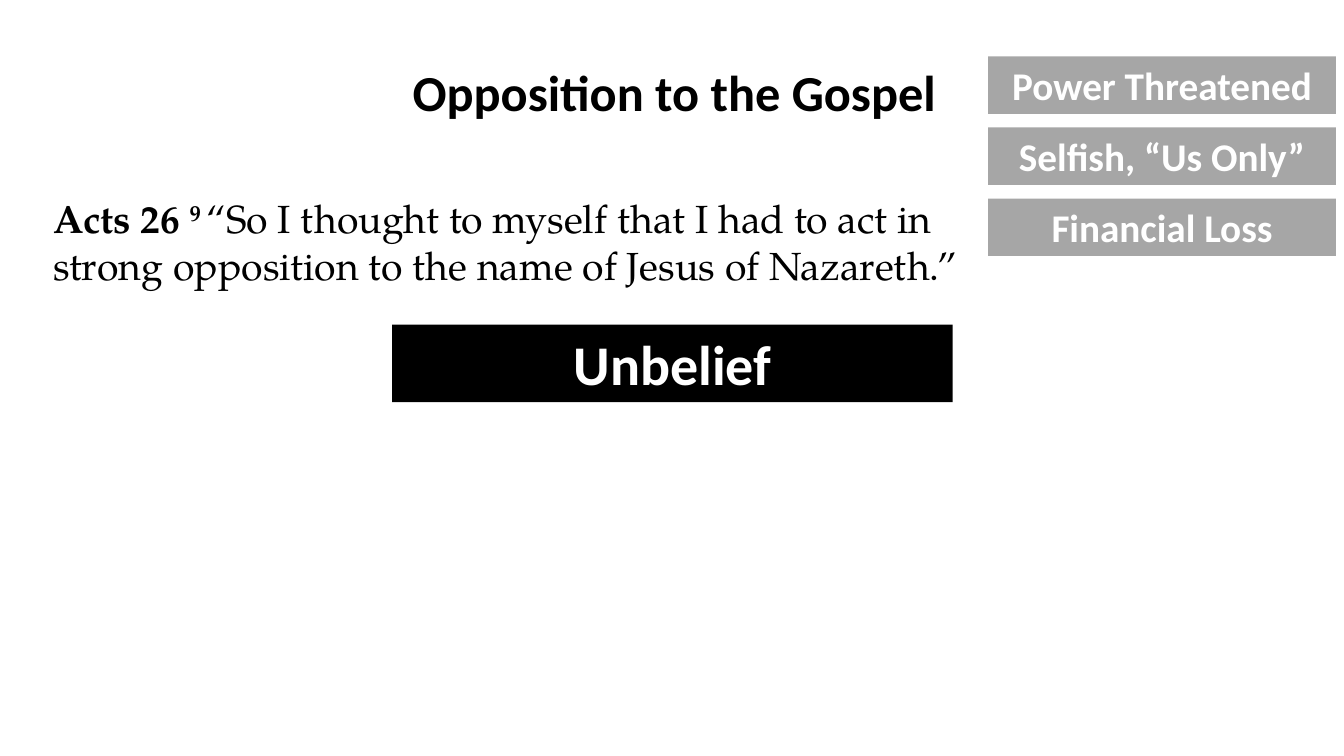
import pptx
import pptx.util
import pptx.dml.color
import pptx.enum.shapes
import pptx.enum.text

Inches = pptx.util.Inches
RGBColor = pptx.dml.color.RGBColor
Align = pptx.enum.text.PP_ALIGN
Anchor = pptx.enum.text.MSO_ANCHOR

BLACK = RGBColor(0x00, 0x00, 0x00)
WHITE = RGBColor(0xFF, 0xFF, 0xFF)
GRAY = RGBColor(0xA6, 0xA6, 0xA6)
SANS = "Calibri"
SERIF = "TeX Gyre Pagella"


class Deck:
    def __init__(self):
        self.prs = pptx.Presentation()
        self.prs.slide_width = Inches(13.33)
        self.prs.slide_height = Inches(7.5)
        self.slide = self.prs.slides.add_slide(self.prs.slide_layouts[5])

    def frame(self, shape, align, anchor):
        """Prepare the text frame and return its first paragraph."""
        frame = shape.text_frame
        frame.word_wrap = True
        frame.auto_size = pptx.enum.text.MSO_AUTO_SIZE.SHAPE_TO_FIT_TEXT
        frame.vertical_anchor = anchor
        para = frame.paragraphs[0]
        para.alignment = align
        return para

    def run(self, para, text, size, color=BLACK, face=SANS, bold=True, raised=False):
        run = para.add_run()
        run.text = text
        font = run.font
        font.name, font.size, font.bold = face, pptx.util.Pt(size), bold
        font.color.rgb = color
        if raised:
            run._r.get_or_add_rPr().set("baseline", "30000")

    def title(self, text, left, top, width, height):
        shape = self.slide.shapes.title
        shape.left, shape.top = Inches(left), Inches(top)
        shape.width, shape.height = Inches(width), Inches(height)
        para = self.frame(shape, Align.CENTER, Anchor.TOP)
        self.run(para, text, 36)

    def verse(self, runs, left, top, width, height):
        """Add a text box from (text, bold, raised) runs."""
        box = self.slide.shapes.add_textbox(
            Inches(left), Inches(top), Inches(width), Inches(height))
        para = self.frame(box, Align.LEFT, Anchor.TOP)
        for text, bold, raised in runs:
            self.run(para, text, 28, face=SERIF, bold=bold, raised=raised)

    def label(self, text, left, top, width, height, fill, size):
        """Add a filled bar with centred white text."""
        bar = self.slide.shapes.add_shape(
            pptx.enum.shapes.MSO_SHAPE.RECTANGLE,
            Inches(left), Inches(top), Inches(width), Inches(height))
        bar.shadow.inherit = False
        bar.fill.solid()
        bar.fill.fore_color.rgb = fill
        bar.line.fill.background()
        para = self.frame(bar, Align.CENTER, Anchor.MIDDLE)
        self.run(para, text, size, WHITE)


def main():
    deck = Deck()
    deck.title("Opposition to the Gospel", 1.81, 0.56, 9.76, 0.71)
    deck.verse([
        ("Acts 26 ", True, False),
        ("9 ", True, True),
        ("“So I thought to myself that I had to act in strong opposition "
         "to the name of Jesus of Nazareth.”", False, False),
    ], 0.43, 1.88, 9.37, 1.04)
    causes = ["Power Threatened", "Selfish, “Us Only”", "Financial Loss"]
    for row, cause in enumerate(causes):
        deck.label(cause, 9.8, 0.56 + 0.705 * row, 3.45, 0.57, GRAY, 28)
    deck.label("Unbelief", 3.89, 3.22, 5.56, 0.77, BLACK, 40)
    deck.prs.save("out.pptx")


if __name__ == "__main__":
    main()
